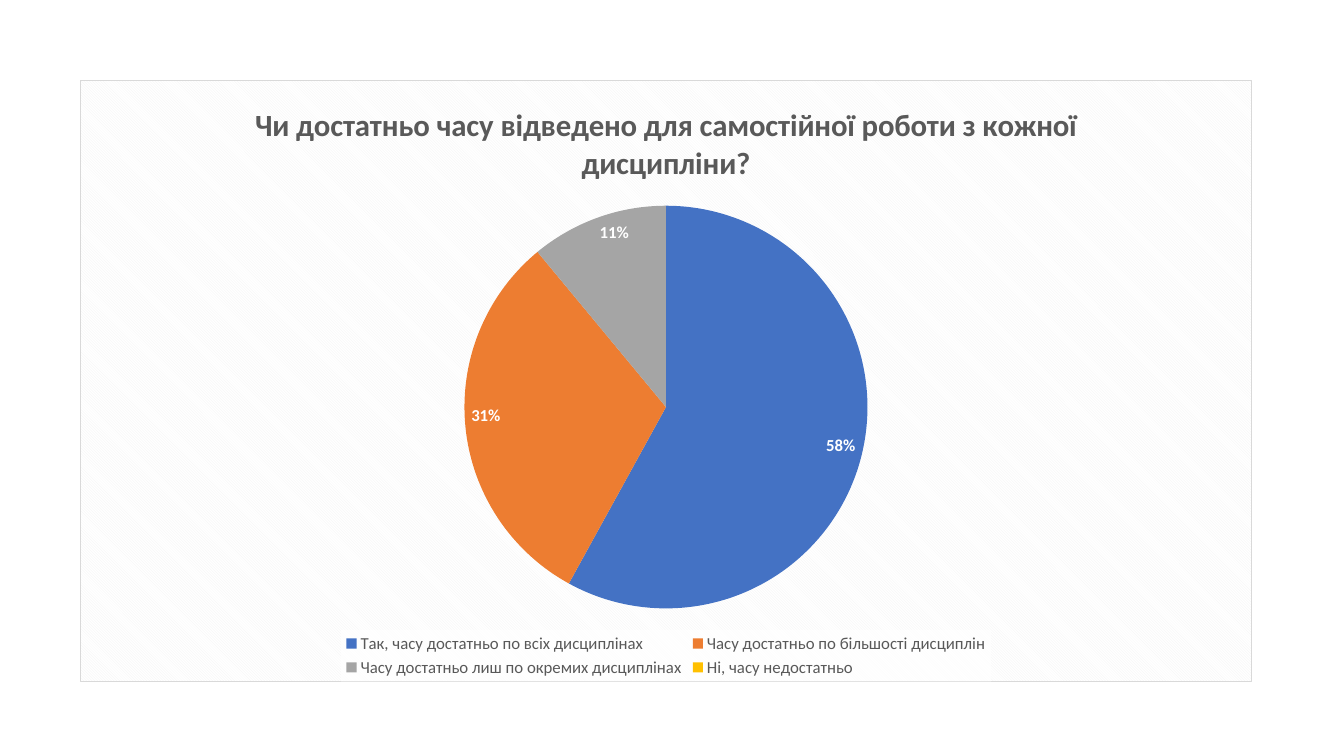
from dataclasses import dataclass

from lxml.etree import SubElement
from pptx import Presentation
from pptx.chart.data import CategoryChartData
from pptx.dml.color import RGBColor
from pptx.enum.chart import XL_CHART_TYPE, XL_LABEL_POSITION, XL_LEGEND_POSITION
from pptx.oxml import parse_xml
from pptx.oxml.ns import nsdecls, qn
from pptx.util import Pt


@dataclass(frozen=True)
class Theme:
    """Colours, font and type sizes of the slide."""
    font: str = "Calibri"
    text: str = "595959"
    base: str = "000000"
    paper: str = "FFFFFF"
    stripe: str = "F2F2F2"
    border: str = "D9D9D9"
    slices: tuple = ("4472C4", "ED7D31", "A5A5A5", "FFC000")
    title_size: int = 22
    label_size: int = 12
    base_size: int = 10


THEME = Theme()
EMU_PER_PX = 914400 / 100.8
QUESTION = "Чи достатньо часу відведено для самостійної роботи з кожної дисципліни?"
ANSWERS = {
    "Так, часу достатньо по всіх дисциплінах": 58,
    "Часу достатньо по більшості дисциплін": 31,
    "Часу достатньо лиш по окремих дисциплінах": 11,
    "Ні, часу недостатньо": 0,
}


def px(n):
    """Turn pixels into EMU."""
    return round(n * EMU_PER_PX)


def set_font(font, size, color, bold=False):
    """Format a chart font."""
    font.name = THEME.font
    font.size = Pt(size)
    font.bold = bold
    font.color.rgb = RGBColor.from_string(color)


def add_text(tf, text, **fmt):
    """Write one formatted run into a text frame."""
    r = tf.paragraphs[0].add_run()
    r.text = text
    set_font(r.font, **fmt)


def shape_props(inner):
    """Build chart shape properties around the given fill and line."""
    return parse_xml(f"<c:spPr {nsdecls('c', 'a')}>{inner}</c:spPr>")


def style_background(chart):
    """Give the chart its striped fill and thin border."""
    props = shape_props(
        '<a:pattFill prst="dkDnDiag">'
        f'<a:fgClr><a:srgbClr val="{THEME.stripe}"/></a:fgClr>'
        f'<a:bgClr><a:srgbClr val="{THEME.paper}"/></a:bgClr></a:pattFill>'
        f'<a:ln w="{Pt(0.75)}"><a:solidFill><a:srgbClr val="{THEME.border}"/>'
        '</a:solidFill></a:ln>')
    chart.element.find(qn("c:chart")).addnext(props)


def style_legend(chart):
    """Place the legend at the bottom on a translucent panel."""
    chart.has_legend = True
    legend = chart.legend
    legend.position = XL_LEGEND_POSITION.BOTTOM
    legend.include_in_layout = False
    set_font(legend.font, THEME.label_size, THEME.text)
    panel = shape_props(
        f'<a:solidFill><a:srgbClr val="{THEME.paper}"><a:alpha val="78000"/>'
        '</a:srgbClr></a:solidFill>')
    chart.element.find(".//" + qn("c:legend")).find(qn("c:overlay")).addnext(panel)


def hide_label(labels, idx):
    """Remove the label of one slice."""
    label = SubElement(labels, qn("c:dLbl"))
    SubElement(label, qn("c:idx"), val=str(idx))
    SubElement(label, qn("c:delete"), val="1")
    labels.insert(0, label)


def style_slices(plot):
    """Colour the slices and label those above zero with percentages."""
    plot.vary_by_categories = True
    series = plot.series[0]
    labels = series.data_labels
    labels.show_value = False
    labels.show_percentage = True
    labels.number_format = "0%"
    labels.number_format_is_linked = False
    labels.position = XL_LABEL_POSITION.INSIDE_END
    set_font(labels.font, THEME.label_size, THEME.paper, bold=True)
    for i, (color, value) in enumerate(zip(THEME.slices, series.values)):
        fill = series.points[i].format.fill
        fill.solid()
        fill.fore_color.rgb = RGBColor.from_string(color)
        if not value:
            hide_label(series.data_labels._element, i)


def add_answer_pie(s, x, y, w, h):
    """Draw the pie of answers in the given box."""
    data = CategoryChartData()
    data.categories = list(ANSWERS)
    data.add_series(QUESTION, list(ANSWERS.values()))
    frame = s.shapes.add_chart(XL_CHART_TYPE.PIE, px(x), px(y), px(w), px(h), data)
    chart = frame.chart
    set_font(chart.font, THEME.base_size, THEME.base)
    chart.has_title = True
    add_text(chart.chart_title.text_frame, QUESTION,
             size=THEME.title_size, color=THEME.text, bold=True)
    chart.chart_title.include_in_layout = False
    style_background(chart)
    style_legend(chart)
    style_slices(chart.plots[0])


def main():
    """Build and save the slide."""
    prs = Presentation()
    prs.slide_width, prs.slide_height = px(1344), px(756)
    s = prs.slides.add_slide(prs.slide_layouts[6])
    add_answer_pie(s, 80, 80, 1172, 602)
    prs.save("out.pptx")


if __name__ == "__main__":
    main()
